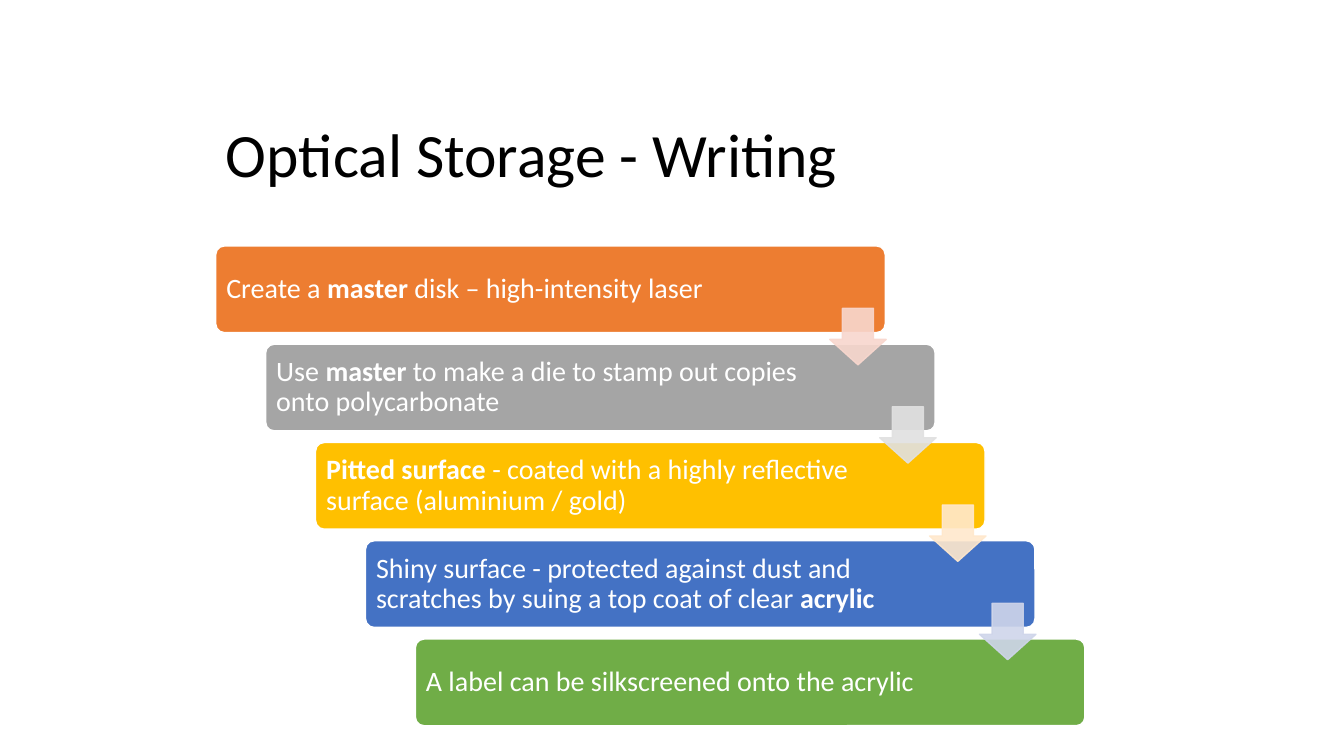
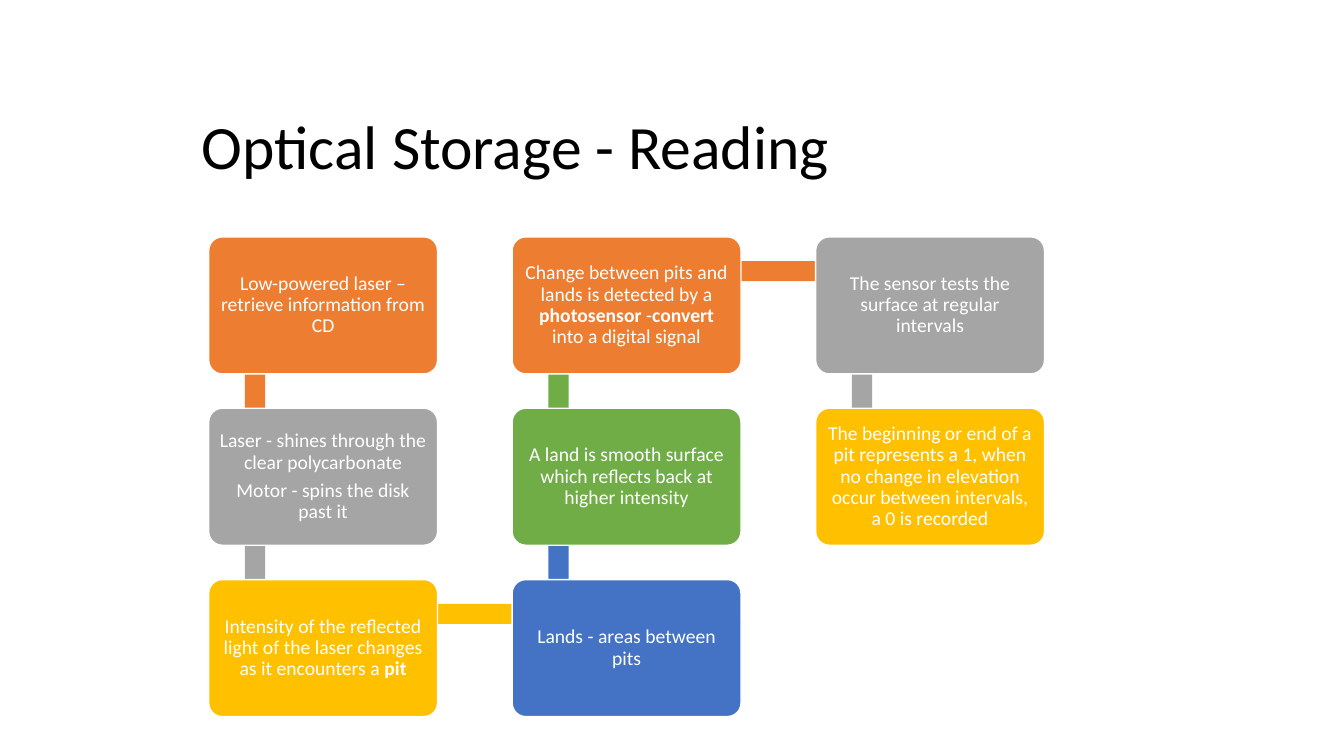
from collections import namedtuple
from dataclasses import dataclass
from itertools import pairwise

from lxml.etree import SubElement
from pptx import Presentation
from pptx.dml.color import RGBColor
from pptx.enum.shapes import MSO_SHAPE
from pptx.enum.text import MSO_ANCHOR, MSO_AUTO_SIZE, PP_ALIGN
from pptx.oxml.ns import qn
from pptx.util import Inches, Pt

Box = namedtuple("Box", "left top width height")


@dataclass(frozen=True)
class Theme:
    font: str = "Calibri"
    title_size: int = 44
    step_size: int = 20
    card_size: int = 14
    line_spacing: float = 0.9
    space_after: float = 0.35
    outline: float = 1
    arrow_opacity: int = 90
    black: str = "000000"
    white: str = "FFFFFF"
    accents: tuple = ("ED7D31", "A5A5A5", "FFC000", "4472C4", "70AD47")
    tints: tuple = ("F8D7CE", "E1E1E1", "FFE8CC", "CFD5EA")


THEME = Theme()

WRITING_STEPS = [
    "Create a *master* disk – high-intensity laser",
    "Use *master* to make a die to stamp out copies onto polycarbonate",
    "*Pitted surface *- coated with a highly reflective surface (aluminium / gold)",
    "Shiny surface - protected against dust and scratches by suing a top coat of clear *acrylic*",
    "A label can be silkscreened onto the acrylic",
]

READING_STEPS = [
    "Low-powered laser – retrieve information from CD",
    "Laser - shines through the clear polycarbonate\nMotor - spins the disk past it",
    "Intensity of the reflected light of the laser changes as it encounters a *pit*",
    "Lands - areas between pits",
    "A land is smooth surface which reflects back at higher intensity",
    "Change between pits and lands is detected by a *photosensor* -*convert* into a digital signal",
    "The sensor tests the surface at regular intervals",
    "The beginning or end of a pit represents a 1, when no change in elevation occur between "
    "intervals, a 0 is recorded",
]


def style_run(run, size, color, bold=False):
    run.font.name = THEME.font
    run.font.size = Pt(size)
    run.font.bold = bold
    run.font.color.rgb = RGBColor.from_string(color)


def write_text(text_frame, text, size, alignment):
    for index, line in enumerate(text.split("\n")):
        paragraph = text_frame.add_paragraph() if index else text_frame.paragraphs[0]
        paragraph.alignment = alignment
        paragraph.line_spacing = THEME.line_spacing
        paragraph.space_after = Pt(size * THEME.space_after)
        for position, part in enumerate(line.split("*")):
            if part:
                run = paragraph.add_run()
                run.text = part
                style_run(run, size, THEME.white, bold=position % 2 == 1)


def add_filled_shape(slide, kind, box, color, line_color=None):
    shape = slide.shapes.add_shape(kind, *(Inches(length) for length in box))
    shape.shadow.inherit = False
    shape.fill.solid()
    shape.fill.fore_color.rgb = RGBColor.from_string(color)
    if line_color:
        shape.line.color.rgb = RGBColor.from_string(line_color)
        shape.line.width = Pt(THEME.outline)
    else:
        shape.line.fill.background()
    return shape


def add_card(slide, box, color, text, size, alignment, inset, right_inset):
    card = add_filled_shape(slide, MSO_SHAPE.ROUNDED_RECTANGLE, box, color, THEME.white)
    card.adjustments[0] = 0.1
    text_frame = card.text_frame
    text_frame.word_wrap = True
    text_frame.vertical_anchor = MSO_ANCHOR.MIDDLE
    text_frame.margin_left = text_frame.margin_top = text_frame.margin_bottom = Inches(inset)
    text_frame.margin_right = Inches(right_inset)
    write_text(text_frame, text, size, alignment)


def add_down_arrow(slide, box, color):
    arrow = add_filled_shape(slide, MSO_SHAPE.DOWN_ARROW, box, color, color)
    arrow.adjustments[0] = 0.45
    arrow.adjustments[1] = 0.55
    arrow.adjustments[0], arrow.adjustments[1] = 0.55, 0.45
    for color_element in arrow._element.spPr.iter(qn("a:srgbClr")):
        SubElement(color_element, qn("a:alpha"), val=str(THEME.arrow_opacity * 1000))


def add_title_slide(presentation, title_text, box):
    slide = presentation.slides.add_slide(presentation.slide_layouts.get_by_name("Title Only"))
    title = slide.shapes.title
    title.left, title.top, title.width, title.height = (Inches(length) for length in box)
    text_frame = title.text_frame
    text_frame.text = title_text
    text_frame.word_wrap = True
    text_frame.auto_size = MSO_AUTO_SIZE.NONE
    text_frame.vertical_anchor = MSO_ANCHOR.MIDDLE
    paragraph = text_frame.paragraphs[0]
    paragraph.alignment = PP_ALIGN.LEFT
    paragraph.line_spacing = THEME.line_spacing
    style_run(paragraph.runs[0], THEME.title_size, THEME.black)
    return slide


def add_staircase(slide, region, steps):
    width, height = 6.64, 0.86
    arrow_size, arrow_x, arrow_y = 0.56, 6.09, 0.62
    gaps = len(steps) - 1
    step_x = (region.width - width) / gaps
    step_y = (region.height - height) / gaps
    boxes = [
        Box(region.left + index * step_x, region.top + index * step_y, width, height)
        for index in range(len(steps))
    ]
    for box, color, text in zip(boxes, THEME.accents, steps):
        add_card(slide, box, color, text, THEME.step_size, PP_ALIGN.LEFT, 0.08, 1.12)
    for box, color in zip(boxes, THEME.tints):
        arrow_box = Box(box.left + arrow_x, box.top + arrow_y, arrow_size, arrow_size)
        add_down_arrow(slide, arrow_box, color)


def add_band(slide, start, end, color):
    anchor_x, anchor_y, thickness = 0.46, 0.34, 0.2
    left = min(start.left, end.left) + anchor_x
    top = min(start.top, end.top) + anchor_y
    if start.left == end.left:
        band = Box(left - thickness / 2, top, thickness, abs(end.top - start.top))
    else:
        band = Box(left, top - thickness / 2, abs(end.left - start.left), thickness)
    add_filled_shape(slide, MSO_SHAPE.RECTANGLE, band, color)


def add_snake(slide, region, steps, rows=3, columns=3):
    width, height = 2.27, 1.36
    pitch_x = (region.width - width) / (columns - 1)
    pitch_y = (region.height - height) / (rows - 1)
    boxes = []
    for index in range(len(steps)):
        column, row = divmod(index, rows)
        if column % 2:
            row = rows - 1 - row
        boxes.append(Box(region.left + column * pitch_x, region.top + row * pitch_y, width, height))
    colors = [THEME.accents[index % len(THEME.accents)] for index in range(len(steps))]
    for (start, end), color in zip(pairwise(boxes), colors):
        add_band(slide, start, end, color)
    for box, color, text in zip(boxes, colors, steps):
        add_card(slide, box, color, text, THEME.card_size, PP_ALIGN.CENTER, 0.06, 0.06)


def main():
    presentation = Presentation()
    presentation.slide_width = Inches(13.33)
    presentation.slide_height = Inches(7.5)

    writing = add_title_slide(presentation, "Optical Storage - Writing", Box(2.14, 0.84, 8.62, 1.45))
    add_staircase(writing, Box(2.14, 2.44, 8.62, 4.76), WRITING_STEPS)

    reading = add_title_slide(presentation, "Optical Storage - Reading", Box(1.9, 0.76, 8.62, 1.45))
    add_snake(reading, Box(2.07, 2.35, 8.29, 4.76), READING_STEPS)

    presentation.save("out.pptx")


if __name__ == "__main__":
    main()
